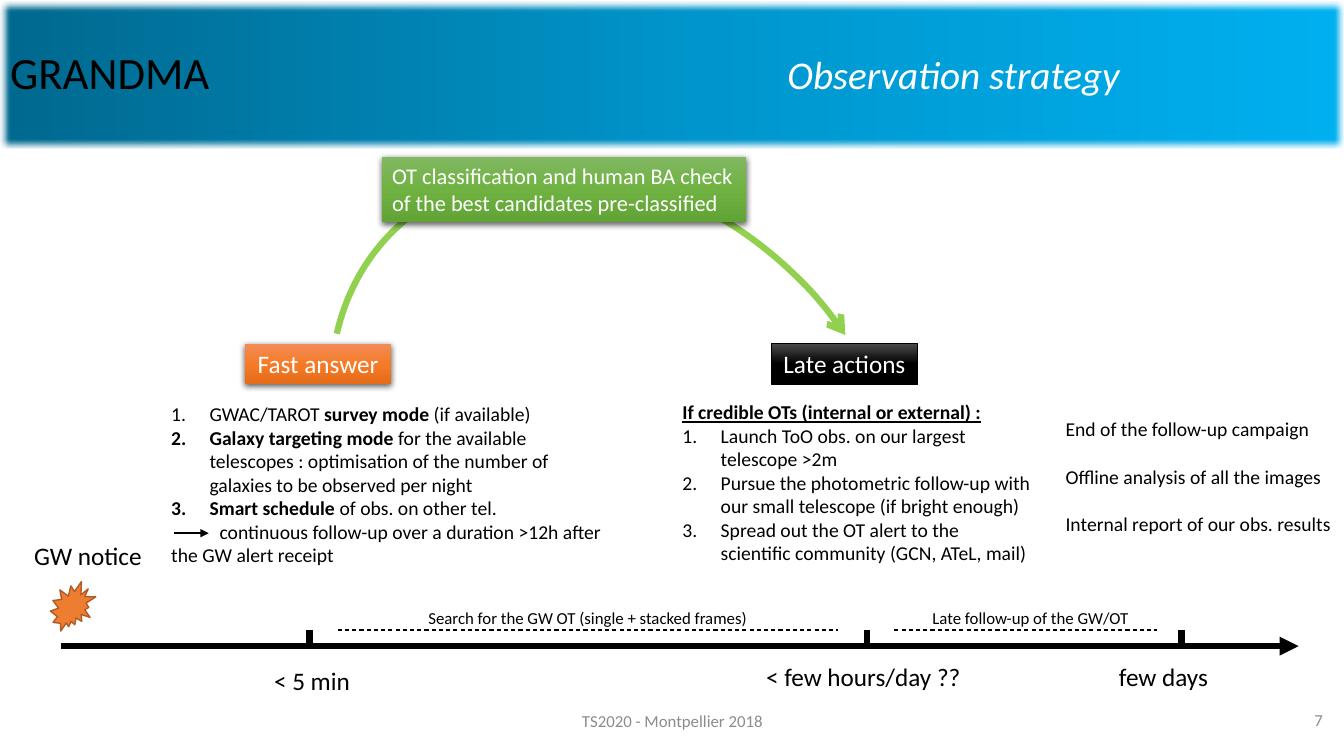
from dataclasses import dataclass, field
from typing import Any

import pptx
import pptx.dml.color
import pptx.enum.dml
import pptx.enum.shapes
import pptx.enum.text
import pptx.oxml
import pptx.oxml.ns
import pptx.util
from lxml import etree

EMU_PER_PX = 9144  # 100 px to the inch
FONT = "Calibri"
BLACK, WHITE, GREY, LIME = "000000", "FFFFFF", "8C8C8C", "92D050"
ALIGN = pptx.enum.text.PP_ALIGN
ANCHOR = pptx.enum.text.MSO_ANCHOR
AUTO_SIZE = pptx.enum.text.MSO_AUTO_SIZE
SHAPE = pptx.enum.shapes.MSO_SHAPE
Box = tuple[int, int, int, int]


@dataclass
class Run:
    text: str
    format: dict[str, Any] = field(default_factory=dict)


@dataclass
class Paragraph:
    runs: list[Run]
    numbered: bool = False
    indent: int = 0
    format: dict[str, Any] = field(default_factory=dict)


@dataclass
class Label:
    box: Box
    paragraphs: list[Paragraph]
    size: int
    color: str = BLACK
    grows: bool = True
    gradient: tuple[str, ...] = ()
    shadow: bool = False
    outline: str = ""


@dataclass
class Line:
    start: tuple[int, int]
    end: tuple[int, int]
    width: float
    dashed: bool = False
    arrow: bool = False


def px(value: int) -> int:
    return value * EMU_PER_PX


def rgb(color: str) -> pptx.dml.color.RGBColor:
    return pptx.dml.color.RGBColor.from_string(color)


def apply(target: Any, values: dict[str, Any]) -> None:
    for name, value in values.items():
        setattr(target, name, value)


def add_xml(parent: Any, tag: str, **attributes: Any) -> Any:
    values = {name: str(value) for name, value in attributes.items()}
    return etree.SubElement(parent, pptx.oxml.ns.qn(tag), values)


def set_gradient(shape: Any, colors: tuple[str, ...], angle: int) -> None:
    """Spread the colours evenly; the angle runs counter-clockwise."""
    shape.fill.gradient()
    shape.fill.gradient_angle = angle
    stops = next(shape._element.spPr.iter(pptx.oxml.ns.qn("a:gsLst")))
    for stop in list(stops):
        stops.remove(stop)
    for index, color in enumerate(colors):
        stop = add_xml(stops, "a:gs", pos=index * 100000 // (len(colors) - 1))
        add_xml(stop, "a:srgbClr", val=color)


def effects(shape: Any) -> Any:
    shape.shadow.inherit = False
    return shape._element.spPr.find(pptx.oxml.ns.qn("a:effectLst"))


def add_arrowhead(shape: Any, kind: str) -> None:
    add_xml(shape.line._get_or_add_ln(), "a:tailEnd", type=kind)


def write_runs(paragraph: Any, runs: list[Run], size: int, color: str) -> None:
    for item in runs:
        run = paragraph.add_run()
        run.text = item.text
        apply(run.font, {"name": FONT, "size": pptx.util.Pt(size), **item.format})
        run.font.color.rgb = rgb(color)


def draw_label(slide: Any, label: Label) -> None:
    box = [px(value) for value in label.box]
    if label.gradient:
        shape = slide.shapes.add_shape(SHAPE.RECTANGLE, *box)
        set_gradient(shape, label.gradient, 270)
        if label.outline:
            shape.line.color.rgb = rgb(label.outline)
            shape.line.width = pptx.util.Pt(0.5)
        else:
            shape.line.fill.background()
        effect_list = effects(shape)
        if label.shadow:
            shadow = add_xml(effect_list, "a:outerShdw", blurRad=57150, dist=19050,
                             dir=5400000, algn="ctr", rotWithShape=0)
            add_xml(add_xml(shadow, "a:srgbClr", val=BLACK), "a:alpha", val=63000)
    else:
        shape = slide.shapes.add_textbox(*box)
    frame = shape.text_frame
    apply(frame, {
        "word_wrap": True,
        "auto_size": AUTO_SIZE.SHAPE_TO_FIT_TEXT if label.grows else AUTO_SIZE.NONE,
        "vertical_anchor": ANCHOR.TOP if label.grows else ANCHOR.MIDDLE,
    })
    for index, item in enumerate(label.paragraphs):
        paragraph = frame.add_paragraph() if index else frame.paragraphs[0]
        apply(paragraph, {"alignment": ALIGN.LEFT, **item.format})
        properties = paragraph._p.get_or_add_pPr()
        if item.numbered:
            properties.set("marL", str(px(38)))
            properties.set("indent", str(px(-38)))
            add_xml(properties, "a:buFont", typeface="+mj-lt")
            add_xml(properties, "a:buAutoNum", type="arabicPeriod")
        elif item.indent:
            properties.set("indent", str(px(item.indent)))
        write_runs(paragraph, item.runs, label.size, label.color)


def draw_line(slide: Any, line: Line) -> None:
    connector = slide.shapes.add_connector(
        pptx.enum.shapes.MSO_CONNECTOR.STRAIGHT,
        *(px(value) for value in line.start + line.end))
    connector.line.color.rgb = rgb(BLACK)
    connector.line.width = pptx.util.Pt(line.width)
    if line.dashed:
        connector.line.dash_style = pptx.enum.dml.MSO_LINE.DASH
    if line.arrow:
        add_arrowhead(connector, "triangle")
    add_xml(connector._element.spPr, "a:effectLst")


def draw_title(slide: Any) -> None:
    title = slide.shapes.title
    apply(title, {"left": 0, "top": px(2), "width": px(1333), "height": px(145)})
    set_gradient(title, ("00688E", "0094CA", "00B0F0"), 0)
    add_xml(effects(title), "a:softEdge", rad=63500)
    apply(title.text_frame, {"word_wrap": True, "vertical_anchor": ANCHOR.MIDDLE,
                             "auto_size": AUTO_SIZE.NONE})
    paragraph = title.text_frame.paragraphs[0]
    apply(paragraph, {"alignment": ALIGN.LEFT, "line_spacing": 0.9})
    tabs = add_xml(paragraph._p.get_or_add_pPr(), "a:tabLst")
    add_xml(tabs, "a:tab", pos=px(771), algn="l")
    write_runs(paragraph, [Run("GRANDMA\t")], 32, BLACK)
    write_runs(paragraph, [Run("Observation strategy", {"italic": True})], 28, WHITE)


def draw_burst(slide: Any) -> None:
    burst = slide.shapes.add_shape(SHAPE.EXPLOSION2, px(50), px(577), px(45), px(49))
    burst.shadow.inherit = False
    burst.fill.solid()
    burst.fill.fore_color.rgb = rgb("ED7D31")
    burst.line.color.rgb = rgb("AF5C24")
    burst.line.width = pptx.util.Pt(1)


def draw_arc(slide: Any) -> None:
    arc = slide.shapes.add_shape(SHAPE.ARC, px(364), px(136), px(498), px(627))
    arc.shadow.inherit = False
    arc.rotation = 313.3
    arc.adjustments[0], arc.adjustments[1] = 149.82, 11.55
    arc.fill.background()
    arc.line.color.rgb = rgb(LIME)
    arc.line.width = pptx.util.Pt(4.5)
    add_arrowhead(arc, "arrow")


def plain(text: str, **format_values: Any) -> list[Paragraph]:
    return [Paragraph([Run(text)], format=format_values)]


def numbered(*runs: Run) -> Paragraph:
    return Paragraph(list(runs), numbered=True)


BOLD = {"bold": True}
GAP = {"space_before": pptx.util.Pt(17)}
AXIS, TICK_TOP = 641, 625

LINES = [
    Line((61, AXIS), (1288, AXIS), 4.5, arrow=True),
    *(Line((x, AXIS), (x, TICK_TOP), 4.5) for x in (307, 860, 1172)),
    *(Line((x, TICK_TOP), (end, TICK_TOP), 0.75, dashed=True)
      for x, end in ((335, 831), (887, 1148))),
    Line((173, 529), (207, 529), 1.5, arrow=True),
]

LABELS = [
    # Stages
    Label((379, 156, 361, 64), plain("OT classification and human BA check of the best "
          "candidates pre-classified"), 16, WHITE,
          gradient=("81B861", "6FB242", "62A336"), shadow=True),
    Label((243, 341, 145, 40), plain("Fast answer", alignment=ALIGN.CENTER), 18, WHITE,
          gradient=("F18C57", "F67B28", "E56C19"), shadow=True),
    Label((765, 341, 145, 40), plain("Late actions", alignment=ALIGN.CENTER), 18, WHITE,
          gradient=("4B4B4B", BLACK, BLACK), outline=BLACK),
    # Actions of each stage
    Label((160, 394, 453, 175), [
        numbered(Run("GWAC/TAROT "), Run("survey mode ", BOLD), Run("(if available)")),
        numbered(Run("Galaxy targeting mode ", BOLD), Run(
            "for the available telescopes : optimisation of the number of galaxies "
            "to be observed per night")),
        numbered(Run("Smart schedule ", BOLD), Run("of obs. on other tel.")),
        Paragraph([Run("continuous follow-up over a duration >12h after the GW alert "
                       "receipt")], indent=48)], 14),
    Label((667, 392, 366, 175), [
        Paragraph([Run("If credible OTs (internal or external) :",
                       {"bold": True, "underline": True})]),
        numbered(Run("Launch ToO obs. on our largest telescope >2m")),
        numbered(Run("Pursue the photometric follow-up with our small telescope "
                     "(if bright enough)")),
        numbered(Run("Spread out the OT alert to the scientific community "
                     "(GCN, ATeL, mail)"))], 14),
    Label((1047, 409, 286, 128), plain("End of the follow-up campaign")
          + plain("Offline analysis of all the images", **GAP)
          + plain("Internal report of our obs. results", **GAP), 14),
    # Timeline
    Label((24, 531, 140, 40), plain("GW notice"), 18),
    Label((262, 655, 130, 40), plain("< 5 min"), 18),
    Label((750, 651, 220, 40), plain("< few hours/day ??"), 18),
    Label((1100, 651, 173, 40), plain("few days"), 18),
    Label((415, 598, 361, 30), plain("Search for the GW OT (single + stacked frames)"), 12),
    Label((915, 598, 361, 30), plain("Late follow-up of the GW/OT"), 12),
    # Footer
    Label((442, 695, 450, 40), plain("TS2020 - Montpellier 2018", alignment=ALIGN.CENTER),
          12, GREY, grows=False),
    Label((1022, 694, 300, 40), plain("7", alignment=ALIGN.RIGHT), 12, GREY, grows=False),
]


def main() -> None:
    presentation = pptx.Presentation()
    apply(presentation, {"slide_width": px(1333), "slide_height": px(750)})
    slide = presentation.slides.add_slide(presentation.slide_layouts[5])
    draw_title(slide)
    draw_burst(slide)
    draw_arc(slide)
    for line in LINES:
        draw_line(slide, line)
    for label in LABELS:
        draw_label(slide, label)
    presentation.save("out.pptx")


if __name__ == "__main__":
    main()
